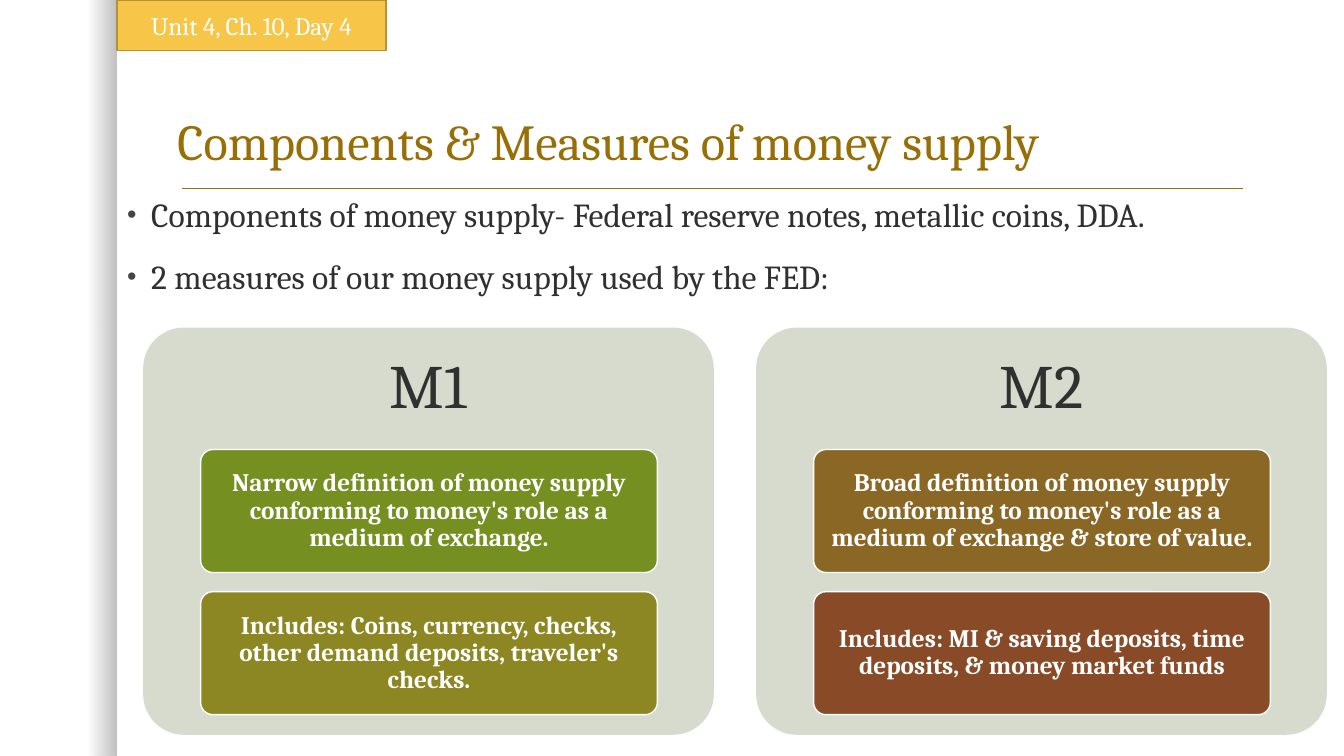
from lxml import etree
from pptx import Presentation
from pptx.dml.color import RGBColor
from pptx.enum.shapes import MSO_CONNECTOR, MSO_SHAPE
from pptx.enum.text import MSO_ANCHOR, MSO_AUTO_SIZE, PP_ALIGN
from pptx.oxml.ns import qn
from pptx.util import Inches, Pt

RECT, ROUND = MSO_SHAPE.RECTANGLE, MSO_SHAPE.ROUNDED_RECTANGLE
LINE = MSO_CONNECTOR.STRAIGHT
MID, LOW, TOP = MSO_ANCHOR.MIDDLE, MSO_ANCHOR.BOTTOM, MSO_ANCHOR.TOP
LEFT, MIDDLE = PP_ALIGN.LEFT, PP_ALIGN.CENTER
FIXED = MSO_AUTO_SIZE.NONE

INK, GOLD, WHITE, BLACK = "303030", "986F07", "FFFFFF", "000000"
POINTS = [
    "Components of money supply- Federal reserve notes, metallic coins, DDA.",
    "2 measures of our money supply used by the FED:",
]
PANELS = [
    ("M1", [
        ("758F21", "Narrow definition of money supply conforming to money's "
                   "role as a medium of exchange."),
        ("8D8723", "Includes: Coins, currency, checks, other demand deposits, "
                   "traveler's checks."),
    ]),
    ("M2", [
        ("8B6725", "Broad definition of money supply conforming to money's "
                   "role as a medium of exchange & store of value."),
        ("894A27", "Includes: MI & saving deposits, time deposits, "
                   "& money market funds"),
    ]),
]


def color(code):
    """Turn a hex string into a colour."""
    return RGBColor.from_string(code)


def apply(item, values):
    """Set every attribute in the dict on the item."""
    for name, value in values.items():
        setattr(item, name, value)


class Deck:
    """Hold the style and the current slide."""

    def __init__(self, font):
        """Start a deck with one slide."""
        self.font = font
        self.show = Presentation()
        apply(self.show, {"slide_width": Inches(13.33),
                          "slide_height": Inches(7.5)})
        self.slide = self.show.slides.add_slide(self.show.slide_layouts[1])
        self.shapes = self.slide.shapes

    def text(self, shape, lines, size, ink, align=MIDDLE, anchor=MID,
             pad=(0.1, 0.05), gap=0, space=0.9, bold=False):
        """Fill a shape with formatted paragraphs."""
        frame = shape.text_frame
        wide, high = map(Inches, pad)
        apply(frame, {"word_wrap": True, "auto_size": FIXED,
                      "vertical_anchor": anchor,
                      "margin_left": wide, "margin_right": wide,
                      "margin_top": high, "margin_bottom": high})
        for index, line in enumerate(lines):
            para = frame.add_paragraph() if index else frame.paragraphs[0]
            apply(para, {"alignment": align, "line_spacing": space,
                         "space_before": Pt(gap if index else 0)})
            run = para.add_run()
            run.text = line
            apply(run.font, {"name": self.font, "size": Pt(size),
                             "bold": bold})
            run.font.color.rgb = color(ink)
        return frame.paragraphs

    def place(self, shape, box):
        """Move a placeholder to its box."""
        names = ("left", "top", "width", "height")
        apply(shape, dict(zip(names, map(Inches, box))))

    def title(self, box, text):
        """Fill in the slide title."""
        shape = self.shapes.title
        self.place(shape, box)
        self.text(shape, [text], 36, GOLD, LEFT, LOW)

    def list(self, box, lines):
        """Fill in the bullet list."""
        shape = self.slide.placeholders[1]
        self.place(shape, box)
        for para in self.text(shape, lines, 24, INK, LEFT, TOP, gap=18):
            props = para._p.get_or_add_pPr()
            props.set("marL", str(Inches(0.24)))
            props.set("indent", str(-Inches(0.24)))
            tint = etree.SubElement(props, qn("a:buClr"))
            etree.SubElement(tint, qn("a:srgbClr"), val="454545")
            etree.SubElement(props, qn("a:buSzPct"), val="80000")
            etree.SubElement(props, qn("a:buFont"), typeface="Arial")
            etree.SubElement(props, qn("a:buChar"), char="•")

    def label(self, box, text, size, ink, **style):
        """Add a text box."""
        shape = self.shapes.add_textbox(*map(Inches, box))
        self.text(shape, [text], size, ink, **style)

    def block(self, kind, box, fill=None, edge=None):
        """Add a preset shape."""
        shape = self.shapes.add_shape(kind, *map(Inches, box))
        shape.shadow.inherit = False
        if kind == ROUND:
            shape.adjustments[0] = 0.1
        if fill:
            shape.fill.solid()
            shape.fill.fore_color.rgb = color(fill)
        if edge:
            shape.line.color.rgb = color(edge)
            shape.line.width = Pt(1)
        else:
            shape.line.fill.background()
        return shape

    def shade(self, box, stops):
        """Add a block that fades from left to right."""
        fill = self.block(RECT, box).fill
        fill.gradient()
        fill.gradient_angle = 0
        for stop, (spot, code, alpha) in zip(fill.gradient_stops, stops):
            stop.position = spot
            stop.color.rgb = color(code)
            tint = stop._gs.find(qn("a:srgbClr"))
            etree.SubElement(tint, qn("a:alpha"), val=str(alpha * 1000))

    def rule(self, start, end, ink):
        """Draw a straight line."""
        line = self.shapes.add_connector(LINE, *map(Inches, start + end))
        line.line.color.rgb = color(ink)
        line.line.width = Pt(1)
        etree.SubElement(line._element.spPr, qn("a:effectLst"))

    def panel(self, left, top, head, cards):
        """Add a panel with a heading and its stacked cards."""
        self.block(ROUND, (left, top, 5.66, 4.04), "D6DBCD")
        self.label((left, top, 5.66, 1.21), head, 44, INK, pad=(0.18, 0.18))
        for row, (fill, text) in enumerate(cards):
            box = (left + 0.57, top + 1.21 + 1.41 * row, 4.53, 1.22)
            card = self.block(ROUND, box, fill, WHITE)
            self.text(card, [text], 18, WHITE, pad=(0.05, 0.04), bold=True)


def main():
    """Build and save the slide."""
    deck = Deck("Cambria")
    deck.shade((0, 0, 1.16, 7.5), [(0.75, BLACK, 0), (1, BLACK, 25)])
    deck.rule((1.81, 1.87), (12.33, 1.87), GOLD)
    deck.title((1.66, 0.42, 10.75, 1.33),
               "Components & Measures of money supply")
    deck.list((1.16, 1.92, 12.16, 1.17), POINTS)
    unit = deck.block(RECT, (1.16, 0, 2.67, 0.5), "F7C547", "B79235")
    deck.text(unit, ["Unit 4, Ch. 10, Day 4"], 18, WHITE, space=1.0)
    for column, (head, cards) in enumerate(PANELS):
        deck.panel(1.42 + 6.08 * column, 3.25, head, cards)
    deck.show.save("out.pptx")


if __name__ == "__main__":
    main()
